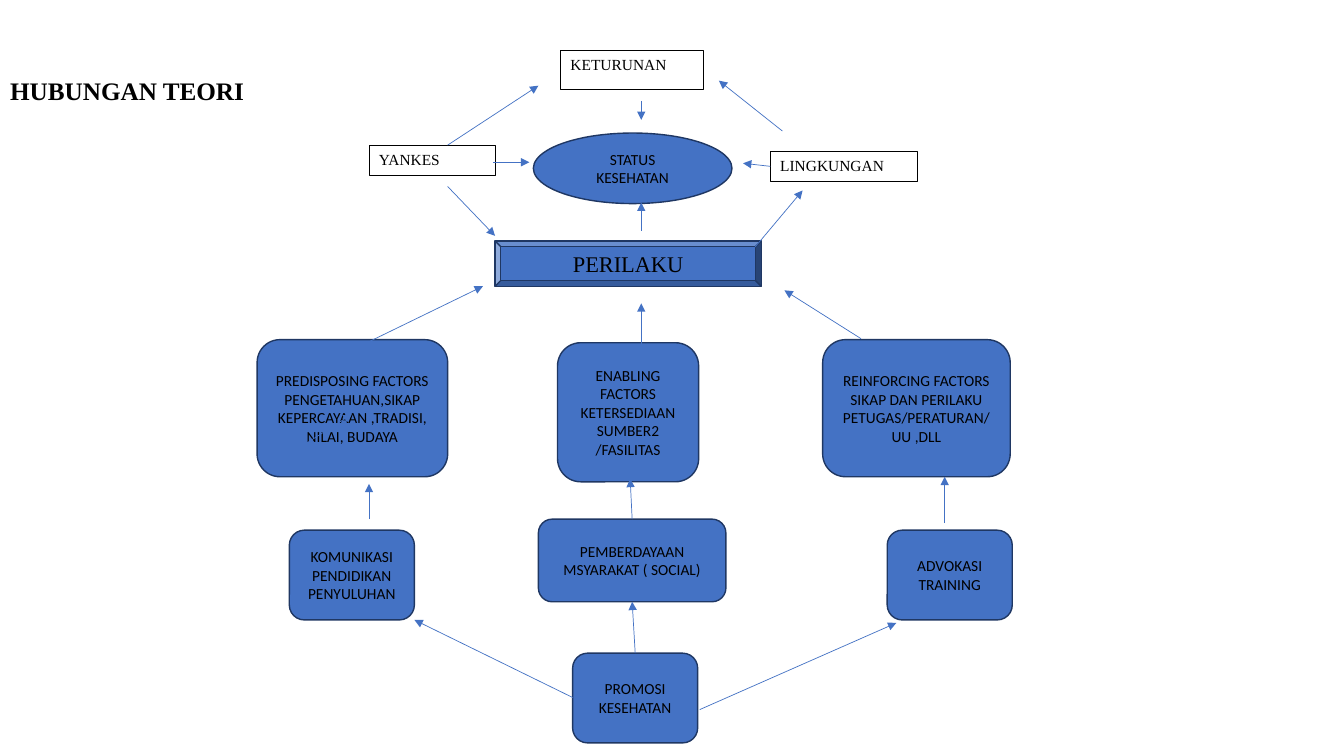
from typing import NamedTuple

from lxml.etree import SubElement
from pptx import Presentation
from pptx.dml.color import RGBColor
from pptx.enum.shapes import MSO_CONNECTOR, MSO_SHAPE
from pptx.enum.text import MSO_ANCHOR, MSO_AUTO_SIZE, PP_ALIGN
from pptx.oxml.ns import qn
from pptx.util import Inches, Pt

BLACK, WHITE, BLUE, NAVY = "000000", "FFFFFF", "4472C4", "1F3763"
SERIF, SANS = "Times New Roman", "Calibri"


class Style(NamedTuple):
    shape: MSO_SHAPE
    fill: str = BLUE
    line: str = NAVY
    line_width: float = 1
    font: str = SANS
    size: float = 11
    align: PP_ALIGN = PP_ALIGN.CENTER
    anchor: MSO_ANCHOR = MSO_ANCHOR.MIDDLE


class Node(NamedTuple):
    style: Style
    left: float
    top: float
    width: float
    height: float
    lines: tuple[str, ...]


class Arrow(NamedTuple):
    x1: float
    y1: float
    x2: float
    y2: float


LABEL = Style(MSO_SHAPE.RECTANGLE, WHITE, BLACK, 0.5, SERIF,
              align=PP_ALIGN.LEFT, anchor=MSO_ANCHOR.TOP)
STATUS = Style(MSO_SHAPE.OVAL)
FACTOR = Style(MSO_SHAPE.ROUNDED_RECTANGLE)
BEHAVIOUR = Style(MSO_SHAPE.BEVEL, font=SERIF, size=16)

NODES = [
    # Determinants around the health status
    Node(LABEL, 5.56, 0.5, 1.42, 0.39, ("KETURUNAN",)),
    Node(LABEL, 3.66, 1.44, 1.25, 0.3, ("YANKES",)),
    Node(LABEL, 7.64, 1.5, 1.46, 0.3, ("LINGKUNGAN",)),
    Node(STATUS, 5.29, 1.32, 1.97, 0.7, ("STATUS KESEHATAN",)),
    Node(BEHAVIOUR, 4.91, 2.39, 2.64, 0.45, ("PERILAKU",)),
    # Factors behind behaviour
    Node(FACTOR, 2.55, 3.37, 1.89, 1.36,
         ("PREDISPOSING FACTORS",
          "PENGETAHUAN,SIKAP KEPERCAYAAN ,TRADISI, NILAI, BUDAYA")),
    Node(FACTOR, 5.53, 3.4, 1.4, 1.38,
         ("ENABLING FACTORS", "KETERSEDIAAN SUMBER2 /FASILITAS")),
    Node(FACTOR, 8.16, 3.37, 1.86, 1.36,
         ("REINFORCING FACTORS",
          "SIKAP DAN PERILAKU PETUGAS/PERATURAN/UU ,DLL")),
    # Health promotion strategies
    Node(FACTOR, 2.87, 5.26, 1.24, 0.89, ("KOMUNIKASI PENDIDIKAN PENYULUHAN",)),
    Node(FACTOR, 5.34, 5.15, 1.86, 0.82, ("PEMBERDAYAAN MSYARAKAT ( SOCIAL)",)),
    Node(FACTOR, 8.8, 5.26, 1.24, 0.89, ("ADVOKASI", "TRAINING")),
    Node(FACTOR, 5.68, 6.48, 1.24, 0.89, ("PROMOSI KESEHATAN",)),
]

ARROWS = [
    # Into the health status
    Arrow(6.36, 1, 6.36, 1.19),
    Arrow(6.36, 2.29, 6.36, 2.01),
    Arrow(4.89, 1.61, 5.25, 1.61),
    Arrow(7.64, 1.65, 7.37, 1.62),
    # Between the determinants
    Arrow(7.76, 1.3, 7.13, 0.8),
    Arrow(4.44, 1.44, 5.34, 0.85),
    Arrow(4.44, 1.85, 4.91, 2.34),
    Arrow(7.49, 2.45, 7.96, 1.89),
    # From factors to behaviour
    Arrow(8.54, 3.36, 7.78, 2.88),
    Arrow(3.66, 3.39, 4.79, 2.84),
    Arrow(6.36, 3.78, 6.36, 3.01),
    Arrow(2.72, 4.6, 3.49, 4.11),
    # From strategies to factors
    Arrow(3.66, 5.15, 3.66, 4.8),
    Arrow(6.27, 5.15, 6.25, 4.75),
    Arrow(9.37, 5.19, 9.37, 4.73),
    # From promotion to strategies
    Arrow(5.68, 6.92, 4.11, 6.15),
    Arrow(6.3, 6.48, 6.27, 5.97),
    Arrow(6.94, 7.04, 8.89, 6.18),
]


def rgb(value: str) -> RGBColor:
    return RGBColor.from_string(value)


def add_run(p, text: str, font: str, size: float, bold: bool = False) -> None:
    r = p.add_run()
    r.text = text
    r.font.name = font
    r.font.size = Pt(size)
    r.font.bold = bold
    r.font.color.rgb = rgb(BLACK)


def add_title(s, text: str) -> None:
    sp = s.shapes.title
    sp.left, sp.top = Inches(0), Inches(0.5)
    sp.width, sp.height = Inches(13.33), Inches(0.55)
    tf = sp.text_frame
    tf.auto_size = MSO_AUTO_SIZE.NONE
    tf.vertical_anchor = MSO_ANCHOR.BOTTOM
    tf.margin_bottom = Inches(0)
    p = tf.paragraphs[0]
    p.alignment = PP_ALIGN.LEFT
    add_run(p, text, SERIF, 18, bold=True)


def add_node(s, node: Node) -> None:
    style = node.style
    sp = s.shapes.add_shape(style.shape, Inches(node.left), Inches(node.top),
                            Inches(node.width), Inches(node.height))
    sp.shadow.inherit = False
    sp.fill.solid()
    sp.fill.fore_color.rgb = rgb(style.fill)
    sp.line.color.rgb = rgb(style.line)
    sp.line.width = Pt(style.line_width)
    tf = sp.text_frame
    tf.word_wrap = True
    tf.vertical_anchor = style.anchor
    for i, text in enumerate(node.lines):
        p = tf.add_paragraph() if i else tf.paragraphs[0]
        p.alignment = style.align
        add_run(p, text, style.font, style.size)


def add_arrow(s, arrow: Arrow) -> None:
    cxn = s.shapes.add_connector(MSO_CONNECTOR.STRAIGHT,
                                 Inches(arrow.x1), Inches(arrow.y1),
                                 Inches(arrow.x2), Inches(arrow.y2))
    cxn.line.color.rgb = rgb(BLUE)
    cxn.line.width = Pt(0.5)
    SubElement(cxn.line._get_or_add_ln(), qn("a:tailEnd"), type="triangle")
    SubElement(cxn._element.spPr, qn("a:effectLst"))


def main() -> None:
    prs = Presentation()
    prs.slide_width, prs.slide_height = Inches(13.33), Inches(7.5)
    s = prs.slides.add_slide(prs.slide_layouts[5])
    add_title(s, "HUBUNGAN TEORI")
    for node in NODES:
        add_node(s, node)
    for arrow in ARROWS:
        add_arrow(s, arrow)
    prs.save("out.pptx")


if __name__ == "__main__":
    main()
